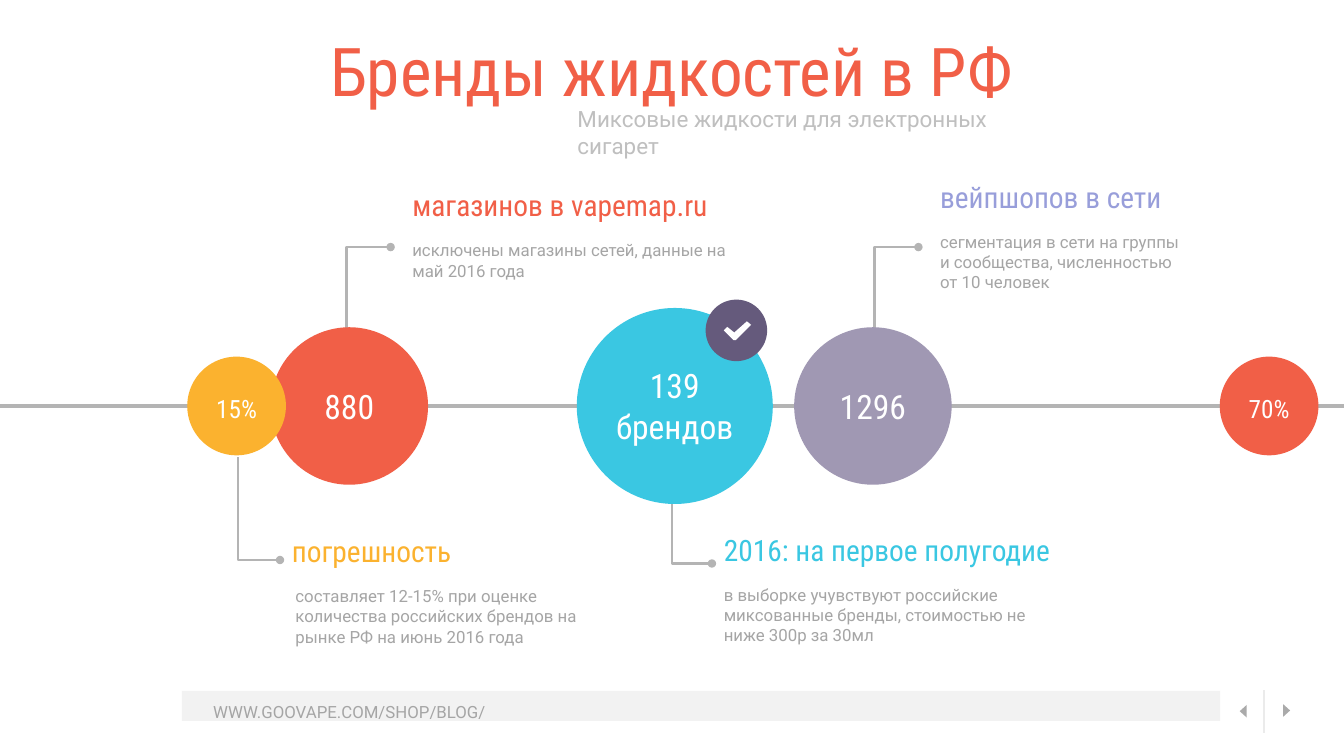
from pptx import Presentation
from pptx.dml.color import RGBColor
from pptx.enum.shapes import MSO_CONNECTOR as Connector, MSO_SHAPE as Preset
from pptx.enum.text import MSO_ANCHOR as Anchor, PP_ALIGN as Align
from pptx.oxml.ns import qn
from pptx.util import Pt
from lxml.etree import SubElement

EMU_PER_PX = 12700
WIDTH, HEIGHT = 1920, 1080
AXIS_Y = 580
COLORS = {
    "red": "F15F47", "amber": "FBB22F", "teal": "3AC7E2", "mauve": "A098B3",
    "lilac": "989EDA", "plum": "655A7C", "white": "FFFFFF", "line": "B4B4B4",
    "body": "A5A5A5", "subtitle": "BFBFBF", "bar": "E6E6E6",
    "divider": "EBEBEB", "arrow": "AAAAAA",
}
BODY_FONT, HEAD_FONT = "Roboto", "Roboto Condensed"


def px(*lengths):
    return [length * EMU_PER_PX for length in lengths]


class SlideStyle:
    def __init__(self, page):
        self.shapes = page.shapes

    def color(self, name):
        return RGBColor.from_string(COLORS[name])

    def paint(self, shape, color):
        shape.shadow.inherit = False
        shape.fill.solid()
        shape.fill.fore_color.rgb = self.color(color)
        shape.line.fill.background()
        return shape

    def bar(self, x, y, width, height, color, opacity):
        shape = self.shapes.add_shape(Preset.RECTANGLE, *px(x, y, width, height))
        self.paint(shape, color)
        fill_color = shape._element.spPr.find(".//" + qn("a:srgbClr"))
        SubElement(fill_color, qn("a:alpha"), val=str(opacity * 1000))

    def circle(self, center_x, center_y, size, color):
        left, top = center_x - size / 2, center_y - size / 2
        shape = self.shapes.add_shape(
            Preset.OVAL, *map(round, px(left, top, size, size)))
        self.paint(shape, color)

    def outline(self, points, closed):
        builder = self.shapes.build_freeform(*points[0], scale=EMU_PER_PX)
        builder.add_line_segments(points[1:], close=closed)
        return builder.convert_to_shape()

    def polygon(self, points, color):
        self.paint(self.outline(points, True), color)

    def leader(self, points):
        """Bent callout line that ends in a dot."""
        shape = self.outline(points, False)
        shape.shadow.inherit = False
        shape.fill.background()
        shape.line.color.rgb = self.color("line")
        shape.line.width = Pt(4)
        SubElement(shape.line._get_or_add_ln(), qn("a:tailEnd"), type="oval")

    def line(self, x1, y1, x2, y2, color, width):
        line = self.shapes.add_connector(Connector.STRAIGHT, *px(x1, y1, x2, y2))
        line.line.color.rgb = self.color(color)
        line.line.width = Pt(width)
        SubElement(line._element.spPr, qn("a:effectLst"))

    def text(self, words, x, y, width, height, size, color, font=HEAD_FONT,
             align=Align.LEFT, anchor=Anchor.TOP, inset=0):
        box = self.shapes.add_textbox(*px(x, y, width, height))
        frame = box.text_frame
        frame.word_wrap = True
        frame.vertical_anchor = anchor
        frame.margin_left = frame.margin_right = Pt(inset)
        frame.margin_top = frame.margin_bottom = Pt(inset)
        frame.text = words
        for para in frame.paragraphs:
            para.alignment = align
            for span in para.runs:
                span.font.size = Pt(size)
                span.font.name = font
                span.font.color.rgb = self.color(color)

    def callout(self, heading, body, x, y, color, width, body_width, indent=0):
        self.text(heading, x, y, width, 51, 42, color)
        self.text(body, x + indent, y + 75, body_width, 98, 24, "body", BODY_FONT)


def draw_footer(style):
    style.bar(260, 987, 1483, 43, "bar", 50)
    style.text("WWW.GOOVAPE.COM/SHOP/BLOG/", 212, 999, 574, 37, 24, "body",
               BODY_FONT, Align.CENTER, Anchor.MIDDLE, 4)
    style.line(1806, 986, 1806, 1047, "divider", 2)
    for base_x, tip_x, middle_y in ((1781, 1771, 1016), (1833, 1843, 1015)):
        style.polygon([(base_x, middle_y - 9), (tip_x, middle_y),
                       (base_x, middle_y + 9)], "arrow")


def draw_timeline(style):
    for x, start_y, end_y, end_x in (
            (495, 494, 353, 558), (1249, 494, 353, 1312),
            (340, 653, 800, 400), (960, 688, 805, 1017)):
        style.leader([(x, start_y), (x, end_y), (end_x, end_y)])
    style.line(0, AXIS_Y, WIDTH, AXIS_Y, "line", 6)

    circles = (
        # label, centre, diameter, colour, then label top, width, height, size
        ("880", 499, 225, "red", 552, 84, 58, 48),
        ("15%", 338, 141, "amber", 562, 76, 44, 36),
        ("139\vбрендов", 964, 280, "teal", 522, 196, 117, 48),
        ("1296", 1247, 225, "mauve", 552, 112, 58, 48),
        ("70%", 1813, 141, "red", 562, 76, 44, 36),
    )
    for label, center, diameter, color, *rest in circles:
        style.circle(center, AXIS_Y, diameter, color)
    for label, center, diameter, color, top, width, height, size in circles:
        style.text(label, center - width // 2, top, width, height, size, "white",
                   align=Align.CENTER)

    style.circle(1052, 472, 88, "plum")
    check_mark = [(1048, 486), (1034, 472), (1039, 467), (1049, 475),
                  (1067, 459), (1073, 464), (1051, 486)]
    style.polygon(check_mark, "white")


def draw_callouts(style):
    style.callout("2016: на первое полугодие",
                  "в выборке учувствуют российские миксованные бренды, "
                  "стоимостью не ниже 300р за 30мл",
                  1034, 760, "teal", 566, 476)
    style.callout("погрешность",
                  "составляет 12-15% при оценке количества российских брендов "
                  "на рынке РФ на июнь 2016 года",
                  417, 762, "amber", 263, 458, indent=5)
    style.callout("магазинов в vapemap.ru",
                  "исключены магазины сетей, данные на май 2016 года",
                  589, 268, "red", 500, 458)
    style.callout("вейпшопов в сети",
                  "сегментация в сети на группы и сообщества, численностью "
                  "от 10 человек",
                  1343, 256, "lilac", 336, 345)


def main():
    deck = Presentation()
    deck.slide_width, deck.slide_height = px(WIDTH, HEIGHT)
    page = deck.slides.add_slide(deck.slide_layouts[6])
    style = SlideStyle(page)
    draw_footer(style)
    style.text("Бренды жидкостей в РФ", 388, 37, 1143, 125, 96, "red",
               align=Align.CENTER, anchor=Anchor.MIDDLE, inset=4)
    style.text("Миксовые жидкости для электронных сигарет", 821, 165, 644, 47,
               32, "subtitle", BODY_FONT, anchor=Anchor.MIDDLE, inset=4)
    draw_timeline(style)
    draw_callouts(style)
    deck.save("out.pptx")


if __name__ == "__main__":
    main()
